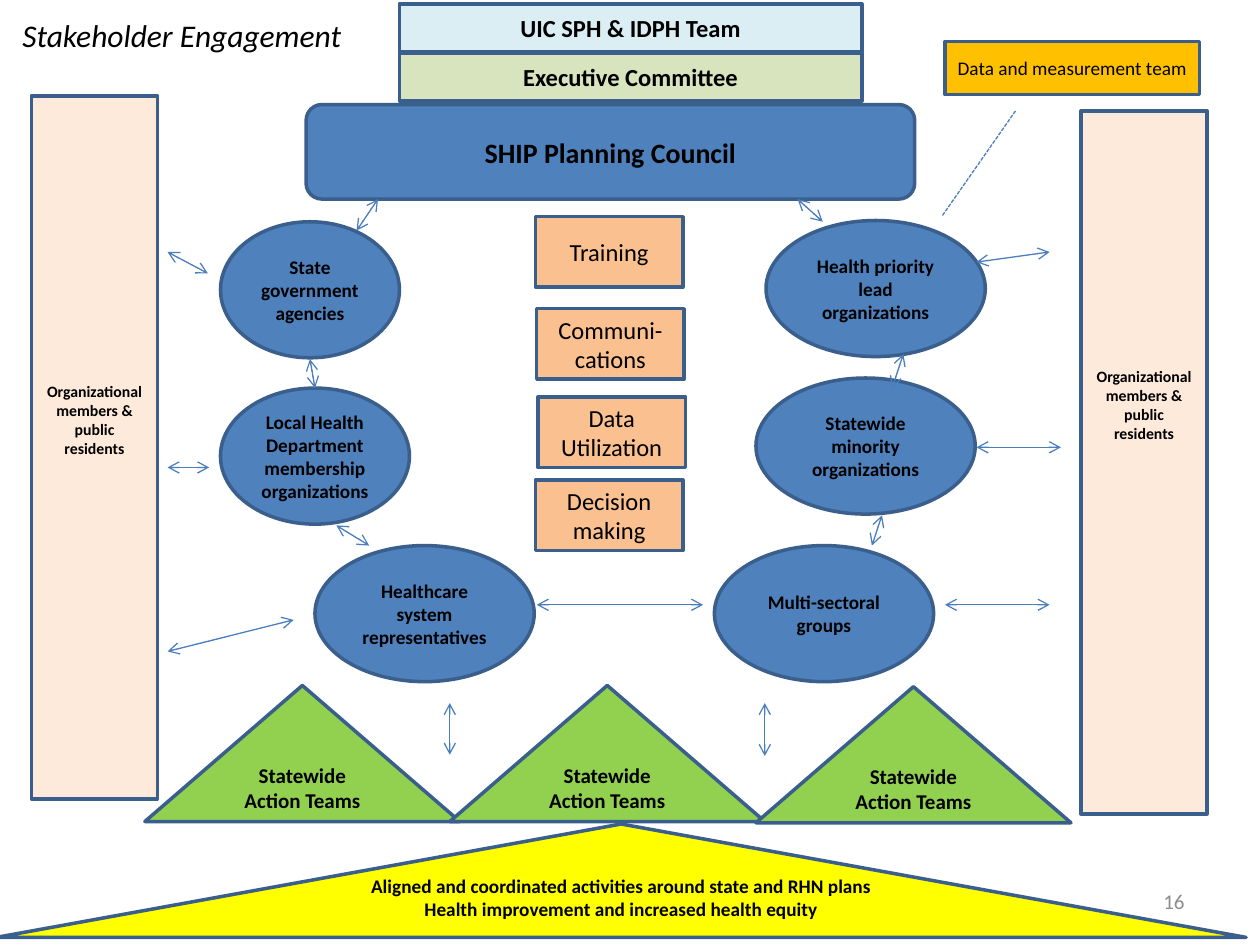
from dataclasses import dataclass

from lxml.etree import SubElement
from pptx import Presentation
from pptx.dml.color import RGBColor
from pptx.enum.dml import MSO_LINE
from pptx.enum.shapes import MSO_CONNECTOR, MSO_SHAPE
from pptx.enum.text import MSO_ANCHOR, PP_ALIGN
from pptx.oxml.ns import qn
from pptx.util import Inches, Pt


@dataclass(frozen=True)
class Theme:
    font: str = "Calibri"
    ink: str = "000000"
    muted: str = "8C8C8C"
    outline: str = "3A5F8C"
    arrow: str = "4B7EBC"
    blue: str = "4F81BD"
    pale_blue: str = "DBEEF4"
    pale_green: str = "D7E4BD"
    orange: str = "FAC090"
    peach: str = "FDEADA"
    gold: str = "FFC000"
    green: str = "92D050"
    yellow: str = "FFFF00"
    title: int = 18
    council: int = 16
    heading: int = 14
    team: int = 12
    label: int = 11
    panel: int = 9
    outline_width: float = 2
    arrow_width: float = 0.75


THEME = Theme()


def apply_format(target, values):
    for name, value in values.items():
        setattr(target, name, value)


def write_text(frame, text, size, color=THEME.ink, align=PP_ALIGN.CENTER,
               anchor=MSO_ANCHOR.MIDDLE, lift=0, **style):
    apply_format(frame, {
        "word_wrap": True,
        "vertical_anchor": anchor,
        "margin_left": Inches(0.1),
        "margin_right": Inches(0.1),
        "margin_top": Inches(0.05),
        "margin_bottom": Inches(0.05 + lift),
    })
    frame.text = text
    for paragraph in frame.paragraphs:
        paragraph.alignment = align
        for run in paragraph.runs:
            apply_format(run.font, {"name": THEME.font, "size": Pt(size), **style})
            run.font.color.rgb = RGBColor.from_string(color)


def add_block(slide, kind, box, fill, text, size, bold=True, lift=0):
    block = slide.shapes.add_shape(kind, *map(Inches, box))
    block.shadow.inherit = False
    block.fill.solid()
    block.fill.fore_color.rgb = RGBColor.from_string(fill)
    block.line.color.rgb = RGBColor.from_string(THEME.outline)
    block.line.width = Pt(THEME.outline_width)
    write_text(block.text_frame, text, size, bold=bold, lift=lift)


def add_label(slide, box, text, size, **style):
    label = slide.shapes.add_textbox(*map(Inches, box))
    write_text(label.text_frame, text, size, **style)


def add_link(slide, start, end):
    link = slide.shapes.add_connector(
        MSO_CONNECTOR.STRAIGHT, *map(Inches, (*start, *end)))
    link.line.color.rgb = RGBColor.from_string(THEME.arrow)
    link.line.width = Pt(THEME.arrow_width)
    SubElement(link._element.spPr, qn("a:effectLst"))
    return link


def add_two_way_arrow(slide, start, end):
    outline = add_link(slide, start, end)._element.spPr.find(qn("a:ln"))
    for tag in ("a:headEnd", "a:tailEnd"):
        SubElement(outline, qn(tag), type="arrow")


def add_members_panels(slide):
    for left, top, lift in ((0.25, 0.76, 0.44), (8.58, 0.88, 0.92)):
        add_block(slide, MSO_SHAPE.RECTANGLE, (left, top, 1, 5.58), THEME.peach,
                  "Organizational members &\npublic residents", THEME.panel, lift=lift)


def add_leadership(slide):
    add_block(slide, MSO_SHAPE.ROUNDED_RECTANGLE, (2.43, 0.83, 4.83, 0.75),
              THEME.blue, "SHIP Planning Council", THEME.council)
    for top, fill, text in (
        (0.03, THEME.pale_blue, "UIC SPH & IDPH Team"),
        (0.42, THEME.pale_green, "Executive Committee"),
    ):
        add_block(slide, MSO_SHAPE.RECTANGLE, (3.17, top, 3.67, 0.38),
                  fill, text, THEME.heading)


def add_support_functions(slide):
    for left, top, text in (
        (4.25, 1.72, "Training"),
        (4.26, 2.45, "Communi-\ncations"),
        (4.27, 3.15, "Data Utilization"),
        (4.25, 3.81, "Decision making"),
    ):
        add_block(slide, MSO_SHAPE.RECTANGLE, (left, top, 1.17, 0.56),
                  THEME.orange, text, THEME.heading, bold=False)


def add_stakeholders(slide):
    for left, top, width, text in (
        (1.75, 1.76, 1.42, "State government agencies"),
        (1.75, 3.08, 1.5, "Local Health Department membership organizations"),
        (2.5, 4.33, 1.74, "Healthcare system representatives"),
        (5.67, 4.33, 1.74, "Multi-sectoral groups"),
        (6, 3, 1.74, "Statewide minority organizations"),
        (6.08, 1.75, 1.74, "Health priority lead organizations"),
    ):
        add_block(slide, MSO_SHAPE.OVAL, (left, top, width, 1.08),
                  THEME.blue, text, THEME.label)


def add_links(slide):
    for start, end in (
        ((3, 1.58), (2.83, 1.83)),
        ((2.46, 2.85), (2.5, 3.08)),
        ((2.67, 4.17), (2.93, 4.33)),
        ((4.26, 4.8), (5.58, 4.8)),
        ((6.92, 4.33), (7, 4.09)),
        ((7.08, 3.08), (7.17, 2.81)),
        ((1.65, 2.17), (1.33, 2)),
        ((1.66, 3.71), (1.33, 3.71)),
        ((2.33, 4.92), (1.33, 5.17)),
        ((6.53, 1.76), (6.33, 1.58)),
        ((7.75, 2.08), (8.33, 2)),
        ((7.75, 3.55), (8.42, 3.55)),
        ((7.5, 4.8), (8.33, 4.8)),
        ((3.57, 5.58), (3.57, 5.99)),
        ((6.07, 5.58), (6.07, 6)),
    ):
        add_two_way_arrow(slide, start, end)
    data_link = add_link(slide, (7.48, 1.71), (8.06, 0.88))
    data_link.line.dash_style = MSO_LINE.SQUARE_DOT


def add_foundation(slide):
    add_block(slide, MSO_SHAPE.ISOSCELES_TRIANGLE, (-0.03, 6.54, 9.92, 0.9),
              THEME.yellow,
              "Aligned and coordinated activities around state and RHN plans\n"
              "Health improvement and increased health equity",
              THEME.label, lift=0.18)
    for left, top in ((1.15, 5.44), (3.57, 5.44), (6, 5.45)):
        add_block(slide, MSO_SHAPE.ISOSCELES_TRIANGLE, (left, top, 2.5, 1.08),
                  THEME.green, "Statewide Action Teams", THEME.team)


def main():
    deck = Presentation()
    apply_format(deck, {"slide_width": Inches(10), "slide_height": Inches(7.5)})
    slide = deck.slides.add_slide(deck.slide_layouts[6])

    add_label(slide, (7.17, 6.95, 2.33, 0.4), "16", THEME.team,
              color=THEME.muted, align=PP_ALIGN.RIGHT)
    add_leadership(slide)
    add_members_panels(slide)
    add_support_functions(slide)
    add_stakeholders(slide)
    add_block(slide, MSO_SHAPE.RECTANGLE, (7.5, 0.33, 2.02, 0.42), THEME.gold,
              "Data and measurement team", THEME.label, bold=False)
    add_foundation(slide)
    add_links(slide)
    add_label(slide, (0.08, 0.08, 2.83, 0.4), "Stakeholder Engagement", THEME.title,
              align=PP_ALIGN.LEFT, anchor=MSO_ANCHOR.TOP, italic=True)

    deck.save("out.pptx")


if __name__ == "__main__":
    main()
